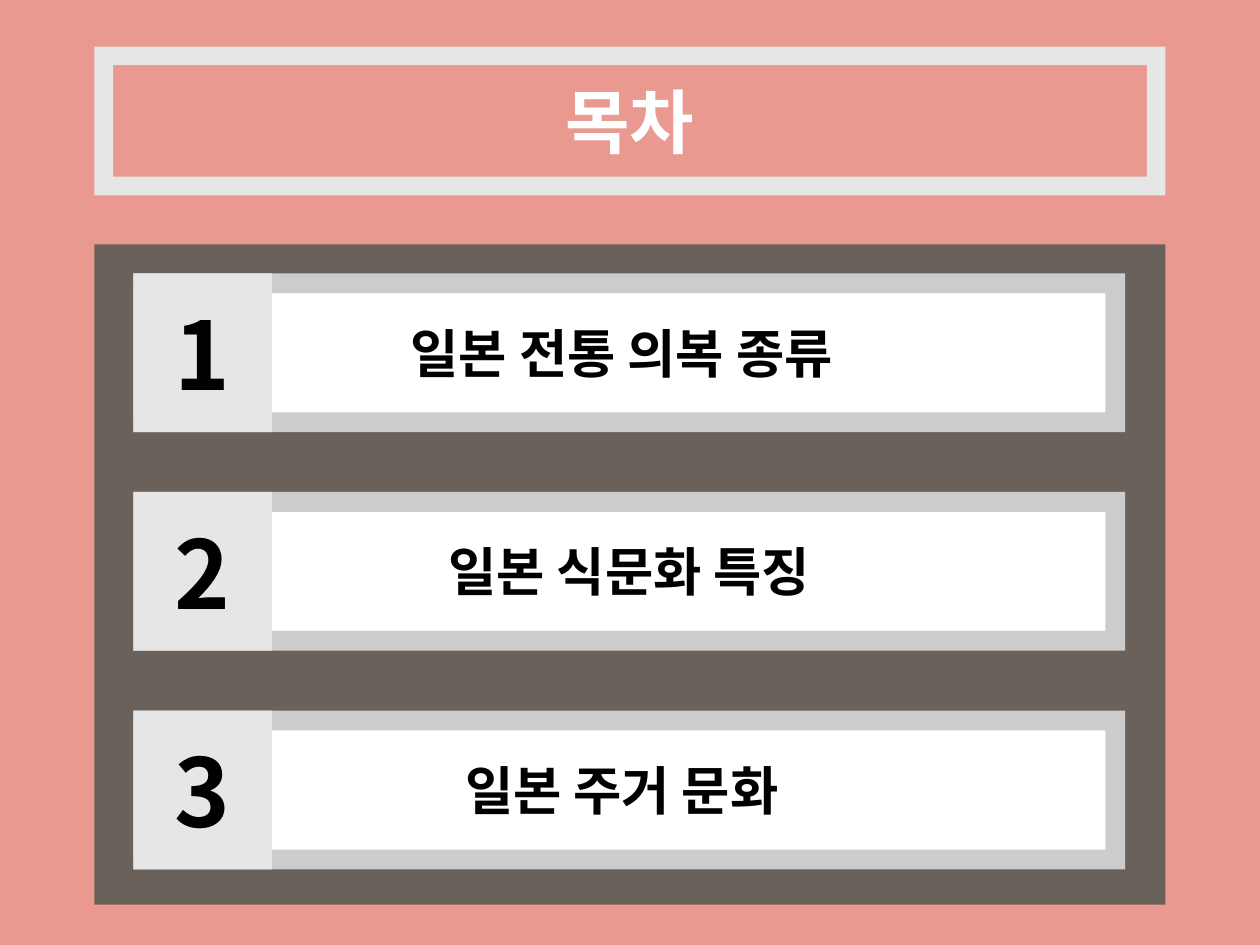
import lxml.etree
import pptx
import pptx.dml.color
import pptx.enum.shapes
import pptx.enum.text
import pptx.oxml.ns
import pptx.util

RGBColor = pptx.dml.color.RGBColor
Shapes = pptx.enum.shapes.MSO_SHAPE
Inches = pptx.util.Inches

CORAL = RGBColor(0xE9, 0x99, 0x90)
BROWN = RGBColor(0x6A, 0x61, 0x5A)
SILVER = RGBColor(0xCC, 0xCC, 0xCC)
PALE = RGBColor(0xE6, 0xE6, 0xE6)
WHITE = RGBColor(0xFF, 0xFF, 0xFF)
BLACK = RGBColor(0x00, 0x00, 0x00)
FONT = "Noto Sans CJK KR"

MARGIN, PANEL_WIDTH = 0.75, 8.5
TITLE_TOP, TITLE_HEIGHT = 0.37, 1.18
ROW_LEFT, ROW_WIDTH, ROW_HEIGHT = 1.06, 7.87, 1.26
FIRST_ROW, ROW_PITCH = 2.17, 1.735
BORDER = 0.125
# Each label with the left edge of its white box.
TOPICS = [("일본 전통 의복 종류", 1.06), ("일본 식문화 특징", 1.12), ("일본 주거 문화", 1.06)]


def write_text(shape, text, size, color=BLACK):
    frame = shape.text_frame
    frame.word_wrap = True
    frame.auto_size = pptx.enum.text.MSO_AUTO_SIZE.NONE
    frame.vertical_anchor = pptx.enum.text.MSO_ANCHOR.MIDDLE
    paragraph = frame.paragraphs[0]
    paragraph.alignment = pptx.enum.text.PP_ALIGN.CENTER
    run = paragraph.add_run()
    run.text = text
    run.font.name = FONT
    run.font.size = pptx.util.Pt(size)
    run.font.bold = True
    run.font.color.rgb = color
    east_asian = lxml.etree.SubElement(run.font._element, pptx.oxml.ns.qn("a:ea"))
    east_asian.set("typeface", FONT)


def add_block(shapes, kind, left, top, width, height, color):
    block = shapes.add_shape(kind, Inches(left), Inches(top), Inches(width), Inches(height))
    block.shadow.inherit = False
    block.fill.solid()
    block.fill.fore_color.rgb = color
    block.line.fill.background()
    if kind == Shapes.FRAME:
        block.adjustments[0] = BORDER
    return block


presentation = pptx.Presentation()
presentation.slide_width = Inches(10)
presentation.slide_height = Inches(7.5)
slide = presentation.slides.add_slide(presentation.slide_layouts[5])
slide.background.fill.solid()
slide.background.fill.fore_color.rgb = CORAL

# Title inside its frame
add_block(slide.shapes, Shapes.FRAME, MARGIN, TITLE_TOP, PANEL_WIDTH, TITLE_HEIGHT, PALE)
title = slide.shapes.title
inset = BORDER * TITLE_HEIGHT
title.left, title.top = Inches(MARGIN + inset), Inches(TITLE_TOP + inset)
title.width, title.height = Inches(PANEL_WIDTH - 2 * inset), Inches(TITLE_HEIGHT - 2 * inset)
write_text(title, "목차", 40, color=WHITE)

# Numbered topics on the dark panel
add_block(slide.shapes, Shapes.RECTANGLE, MARGIN, 1.94, PANEL_WIDTH, 5.24, BROWN)
for index, (topic, label_left) in enumerate(TOPICS):
    top = FIRST_ROW + index * ROW_PITCH
    row = slide.shapes.add_group_shape()
    label = add_block(row.shapes, Shapes.RECTANGLE, label_left, top + 0.08, 7.75, 1.09, WHITE)
    write_text(label, topic, 30)
    add_block(row.shapes, Shapes.FRAME, ROW_LEFT, top, ROW_WIDTH, ROW_HEIGHT, SILVER)
    number = add_block(slide.shapes, Shapes.RECTANGLE, ROW_LEFT, top, 1.1, ROW_HEIGHT, PALE)
    write_text(number, str(index + 1), 54)

presentation.save("out.pptx")
